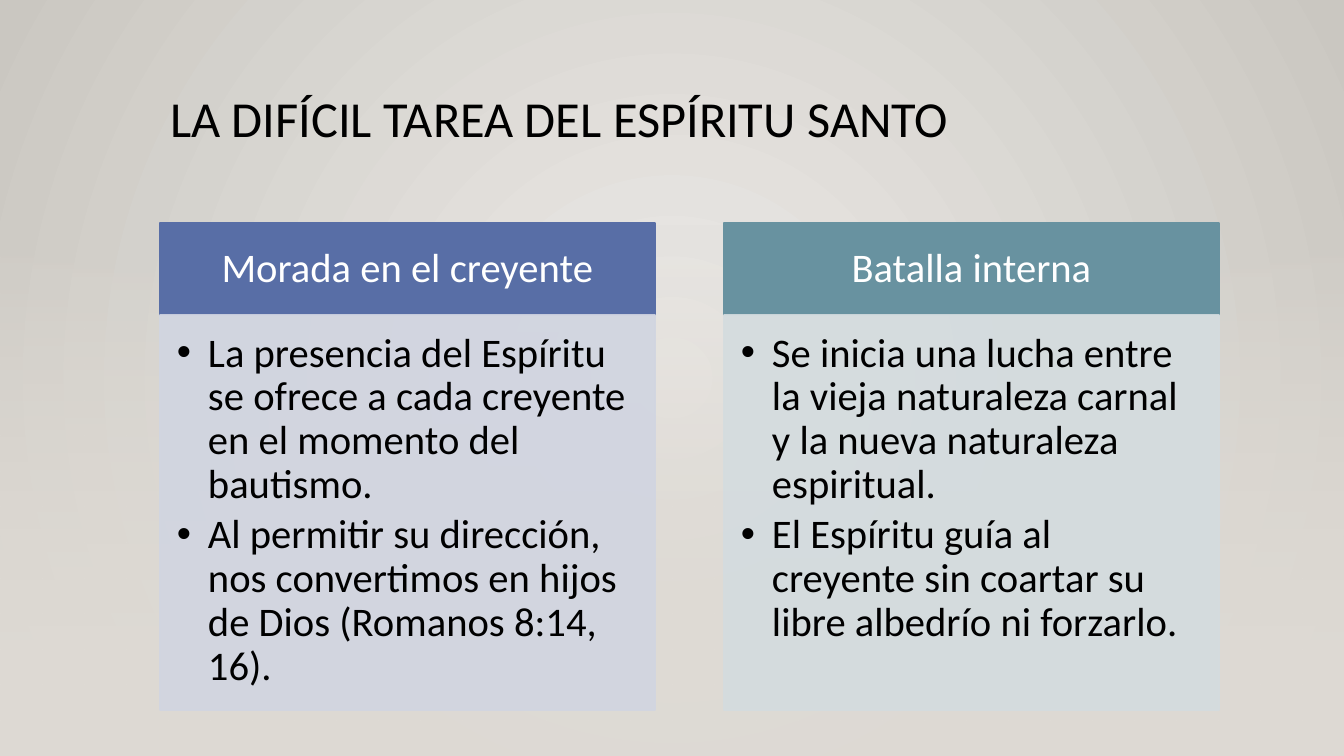
"""Builds the slide on the hard task of the Spirit: a title over two cards."""
import pptx
import pptx.util
import pptx.dml.color
import pptx.enum.shapes
import pptx.enum.text
import pptx.oxml
import pptx.oxml.ns
from lxml import etree

PX = 914400 / 100.8
NS = pptx.oxml.ns.nsdecls("a")
TAG = pptx.oxml.ns.qn
ALIGN = pptx.enum.text.PP_ALIGN
ANCHOR = pptx.enum.text.MSO_ANCHOR


def hue(code):
    return pptx.dml.color.RGBColor.from_string(code)


def box(left, top, width, height):
    rect = slide.shapes.add_shape(
        pptx.enum.shapes.MSO_SHAPE.RECTANGLE,
        *[round(n * PX) for n in (left, top, width, height)])
    rect.shadow.inherit = False
    return rect


deck = pptx.Presentation()
deck.slide_width, deck.slide_height = round(1344 * PX), round(756 * PX)
slide = deck.slides.add_slide(deck.slide_layouts[5])

back = slide.background.fill
back.gradient()
for stop, code in zip(back.gradient_stops, ("ECEAE7", "CAC7C1")):
    stop.color.rgb = hue(code)
lin = slide._element.xpath(".//p:bg//a:lin")[0]
lin.getparent().replace(lin, pptx.oxml.parse_xml(
    f'<a:path {NS} path="circle"><a:fillToRect l="50000" t="50000" r="50000" b="50000"/></a:path>'))

for _ in range(2):
    veil = box(0, 223, 1344, 533)
    veil.line.fill.background()
    veil.fill.gradient()
    veil.fill.gradient_angle = 270
    for stop in veil.fill.gradient_stops:
        stop.color.rgb = hue("DFDBD5")
    clear = veil._element.xpath(".//a:gs/a:srgbClr")[0]
    etree.SubElement(clear, TAG("a:alpha"), val="0")
    slide.shapes._spTree.insert(2, veil._element)

title = slide.shapes.title
title.left, title.top, title.width, title.height = [
    round(n * PX) for n in (160, 89, 1058, 116)]
frame = title.text_frame
frame.text = "LA DIFÍCIL TAREA DEL ESPÍRITU SANTO"
frame.auto_size = pptx.enum.text.MSO_AUTO_SIZE.NONE
frame.vertical_anchor = ANCHOR.TOP
head = frame.paragraphs[0]
head.alignment = ALIGN.LEFT
head.line_spacing = 0.9
head.font.name, head.font.size = "Calibri", pptx.util.Pt(36)
head.font.color.rgb = hue("000000")

cards = [
    ("586EA6", "D1D5E1", "Morada en el creyente", [
        "La presencia del Espíritu se ofrece a cada creyente en el momento del bautismo.",
        "Al permitir su dirección, nos convertimos en hijos de Dios (Romanos 8:14, 16)."]),
    ("6892A0", "D4DCDF", "Batalla interna", [
        "Se inicia una lucha entre la vieja naturaleza carnal y la nueva naturaleza espiritual.",
        "El Espíritu guía al creyente sin coartar su libre albedrío ni forzarlo."]),
]

for col, (dark, pale, name, points) in enumerate(cards):
    left = 160 + col * 564
    parts = [
        (223, 92, dark, [name], (23, 13, 23, 13), "FFFFFF", False),
        (315, 395, pale, points, (17, 17, 23, 25), "000000", True),
    ]
    for top, height, fill, lines, pad, ink, listed in parts:
        card = box(left, top, 495, height)
        card.fill.solid()
        card.fill.fore_color.rgb = hue(fill)
        card.line.color.rgb = hue(fill)
        card.line.width = pptx.util.Pt(1.25)
        if listed:
            for tint in card._element.xpath("./p:spPr//a:srgbClr"):
                etree.SubElement(tint, TAG("a:alpha"), val="90000")
        frame = card.text_frame
        frame.word_wrap = True
        frame.vertical_anchor = ANCHOR.TOP if listed else ANCHOR.MIDDLE
        frame.margin_left, frame.margin_top, frame.margin_right, frame.margin_bottom = [
            round(n * PX) for n in pad]
        frame.text = "\n".join(lines)
        for para in frame.paragraphs:
            para.alignment = ALIGN.LEFT if listed else ALIGN.CENTER
            para.line_spacing = 0.9
            if listed:
                para.space_after = pptx.util.Pt(4.5)
                props = para._p.get_or_add_pPr()
                props.set("marL", str(round(31 * PX)))
                props.set("indent", str(round(-31 * PX)))
                etree.SubElement(props, TAG("a:buFont"), typeface="Arial")
                etree.SubElement(props, TAG("a:buChar"), char="•")
            para.font.name, para.font.size = "Calibri", pptx.util.Pt(29)
            para.font.color.rgb = hue(ink)

deck.save("out.pptx")
